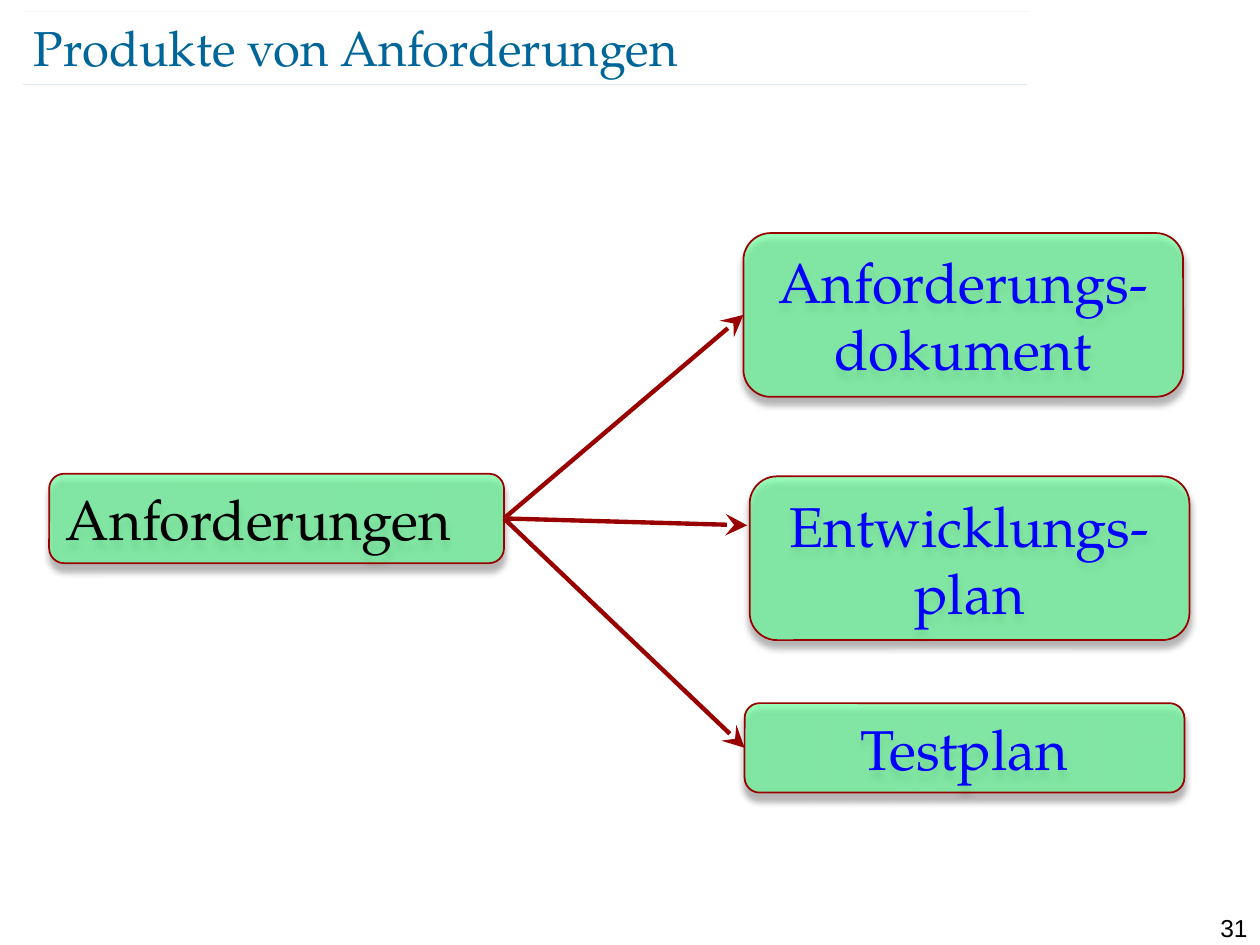
from lxml import etree
from pptx import Presentation
from pptx.dml.color import RGBColor
from pptx.enum.shapes import MSO_CONNECTOR, MSO_SHAPE
from pptx.enum.text import MSO_ANCHOR, PP_ALIGN
from pptx.oxml.ns import qn
from pptx.util import Pt

STRAIGHT = MSO_CONNECTOR.STRAIGHT
ROUNDED = MSO_SHAPE.ROUNDED_RECTANGLE
LEFT, CENTER, RIGHT = PP_ALIGN.LEFT, PP_ALIGN.CENTER, PP_ALIGN.RIGHT
TOP, MIDDLE = MSO_ANCHOR.TOP, MSO_ANCHOR.MIDDLE
LEFT_SIDE, RIGHT_SIDE = 1, 3

SERIF, SANS = "TeX Gyre Pagella", "Arial"
TEAL, RED, GREEN = "006699", "990000", "66FF99"
BLUE, BLACK = "0000FF", "000000"

TITLE = "Produkte von Anforderungen"
PAGE_NUMBER = "31"
SOURCE = ("Anforderungen", 28.1, 270.7, 259.9, 51.1)
PRODUCT_WIDTH = 251.3
PRODUCTS = [
    ("Anforderungs-dokument", 424.8, 133.2, 93.6, None),
    ("Entwicklungs-plan", 428.4, 272.2, 93.6, (427, 300.2)),
    ("Testplan", 425.5, 401.8, 51.1, None),
]
RULES = [(13, 48.2), (14.4, 6.5)]
RULE_WIDTH = 573.8


def color(value):
    return RGBColor.from_string(value)


def set_alpha(fill_parent, percent):
    rgb = next(fill_parent.iter(qn("a:srgbClr")))
    etree.SubElement(rgb, qn("a:alpha"), val=str(percent * 1000))


def write(shape, text, font, size, hue, align=LEFT, anchor=MIDDLE):
    frame = shape.text_frame
    frame.text = text
    frame.word_wrap = True
    frame.vertical_anchor = anchor
    para = frame.paragraphs[0]
    para.alignment = align
    span = para.runs[0]
    span.font.name = font
    span.font.size = Pt(size)
    span.font.color.rgb = color(hue)


def add_shadow(shape):
    effects = shape._element.spPr.get_or_add_effectLst() if hasattr(
        shape._element.spPr, "get_or_add_effectLst") else etree.SubElement(
        shape._element.spPr, qn("a:effectLst"))
    shadow = etree.SubElement(
        effects, qn("a:outerShdw"), blurRad=str(Pt(4)), dist=str(Pt(4)),
        dir="5400000", algn="ctr", rotWithShape="0")
    etree.SubElement(shadow, qn("a:srgbClr"), val=BLACK)
    set_alpha(shadow, 43)


def add_box(page, text, left, top, width, height, hue, align):
    box = page.shapes.add_shape(ROUNDED, Pt(left), Pt(top), Pt(width), Pt(height))
    box.fill.solid()
    box.fill.fore_color.rgb = color(GREEN)
    set_alpha(box._element.spPr, 65)
    box.line.color.rgb = color(RED)
    box.line.width = Pt(1)
    add_shadow(box)
    write(box, text, SERIF, 32, hue, align)
    return box


def add_line(page, start, end, hue, width):
    line = page.shapes.add_connector(STRAIGHT, *(Pt(value) for value in start + end))
    line.line.color.rgb = color(hue)
    line.line.width = Pt(width)
    etree.SubElement(line._element.spPr, qn("a:effectLst"))
    return line


def main():
    deck = Presentation()
    deck.slide_width, deck.slide_height = Pt(720), Pt(540)
    page = deck.slides.add_slide(deck.slide_layouts[5])

    for left, top in RULES:
        rule = add_line(page, (left, top), (left + RULE_WIDTH, top), TEAL, 0.1)
        set_alpha(rule.line._ln, 35)

    number = page.shapes.add_textbox(Pt(680.4), Pt(518), Pt(39.6), Pt(17.3))
    write(number, PAGE_NUMBER, SANS, 14, BLACK, RIGHT, TOP)

    title = page.shapes.title
    title.left, title.top, title.width, title.height = Pt(19.4), Pt(9.4), Pt(625.7), Pt(34.6)
    write(title, TITLE, SERIF, 28, TEAL)
    frame = title.text_frame
    frame.margin_left = frame.margin_top = frame.margin_right = frame.margin_bottom = 0

    source = add_box(page, *SOURCE, BLACK, LEFT)
    products = [
        (add_box(page, text, left, top, PRODUCT_WIDTH, height, BLUE, CENTER), tip)
        for text, left, top, height, tip in PRODUCTS
    ]
    for product, tip in products:
        arrow = add_line(page, (0, 0), tip or (0, 0), RED, 2.5)
        arrow.begin_connect(source, RIGHT_SIDE)
        if tip is None:
            arrow.end_connect(product, LEFT_SIDE)
        etree.SubElement(arrow.line._ln, qn("a:tailEnd"), type="stealth", w="lg", len="lg")

    deck.save("out.pptx")


if __name__ == "__main__":
    main()
